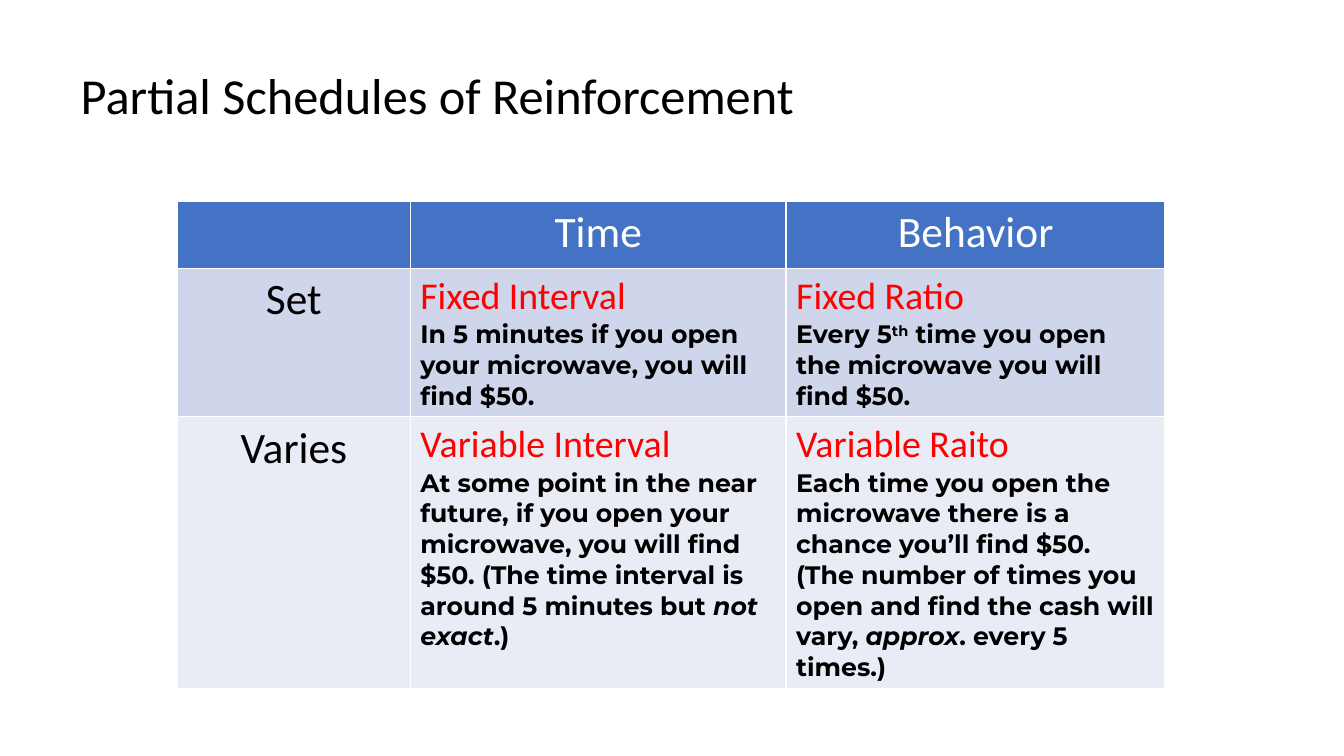
from pptx import Presentation
from pptx.dml.color import RGBColor
from pptx.enum.text import MSO_ANCHOR, PP_ALIGN
from pptx.util import Cm, Pt

LEFT, CENTER = PP_ALIGN.LEFT, PP_ALIGN.CENTER
MIDDLE = MSO_ANCHOR.MIDDLE
TITLE_ONLY = 5

LABEL = {"name": "Calibri", "size": Pt(31), "bold": False}
TERM = {"name": "Calibri", "size": Pt(27), "bold": False}
EXAMPLE = {"name": "Montserrat", "size": Pt(18), "bold": True}
ITALIC = {**EXAMPLE, "italic": True}
HEADING = {"name": "Calibri", "size": Pt(36), "bold": False}

ROW_FILLS = ["4472C4", "CFD5EA", "E9EBF5"]
COLUMN_WIDTHS = [5.87, 9.47, 9.55]
ROW_HEIGHTS = [1.68, 3.73, 6.71]


def color(value):
    return RGBColor.from_string(value)


def label(text, ink="000000"):
    return [(CENTER, [(text, LABEL, ink)])]


def schedule(term, *spans):
    """Return a red term above its example, given as (text, format) spans."""
    example = [(text, style, "000000") for text, style in spans]
    return [(LEFT, [(term, TERM, "FF0000")]), (LEFT, example)]


SCHEDULES = [
    [[], label("Time", "FFFFFF"), label("Behavior", "FFFFFF")],
    [
        label("Set"),
        schedule(
            "Fixed Interval",
            ("In 5 minutes if you open your microwave, you will find $50.", EXAMPLE),
        ),
        schedule(
            "Fixed Ratio",
            ("Every 5", EXAMPLE),
            ("th", {**EXAMPLE, "superscript": True}),
            (" time you open the microwave you will find $50.", EXAMPLE),
        ),
    ],
    [
        label("Varies"),
        schedule(
            "Variable Interval",
            ("At some point in the near future, if you open your microwave, "
             "you will find $50. (The time interval is around 5 minutes but ", EXAMPLE),
            ("not exact", ITALIC),
            (".)", EXAMPLE),
        ),
        schedule(
            "Variable Raito",
            ("Each time you open the microwave there is a chance you’ll find $50. "
             "(The number of times you open and find the cash will vary, ", EXAMPLE),
            ("approx", ITALIC),
            (". every 5 times.)", EXAMPLE),
        ),
    ],
]


class SlideBuilder:
    def __init__(self, deck):
        self.page = deck.slides.add_slide(deck.slide_layouts[TITLE_ONLY])

    def add_text(self, frame, paragraphs):
        """Fill a text frame with (alignment, spans) paragraphs."""
        for index, (alignment, spans) in enumerate(paragraphs):
            para = frame.add_paragraph() if index else frame.paragraphs[0]
            para.alignment = alignment
            for text, style, ink in spans:
                span = para.add_run()
                span.text = text
                span.font.color.rgb = color(ink)
                for key, value in style.items():
                    if key == "superscript":
                        span.font._element.set("baseline", "30000")
                    else:
                        setattr(span.font, key, value)

    def title(self, text, left, top, width, height):
        box = self.page.shapes.title
        place = {"left": left, "top": top, "width": width, "height": height}
        for key, value in place.items():
            setattr(box, key, Cm(value))
        frame = box.text_frame
        frame.vertical_anchor = MIDDLE
        self.add_text(frame, [(LEFT, [(text, HEADING, "000000")])])
        frame.paragraphs[0].line_spacing = 0.9

    def table(self, rows, left, top):
        table = self.page.shapes.add_table(
            len(rows), len(COLUMN_WIDTHS), Cm(left), Cm(top),
            Cm(sum(COLUMN_WIDTHS)), Cm(sum(ROW_HEIGHTS)),
        ).table
        for column, width in zip(table.columns, COLUMN_WIDTHS):
            column.width = Cm(width)
        for row, height, fill, contents in zip(table.rows, ROW_HEIGHTS, ROW_FILLS, rows):
            row.height = Cm(height)
            for cell, paragraphs in zip(row.cells, contents):
                cell.fill.solid()
                cell.fill.fore_color.rgb = color(fill)
                self.add_text(cell.text_frame, paragraphs)


def main():
    deck = Presentation()
    deck.slide_width, deck.slide_height = Cm(33.87), Cm(19.05)
    builder = SlideBuilder(deck)
    builder.title("Partial Schedules of Reinforcement", 1.78, 0.89, 30.3, 3.15)
    builder.table(SCHEDULES, 4.47, 5.08)
    deck.save("out.pptx")


if __name__ == "__main__":
    main()
